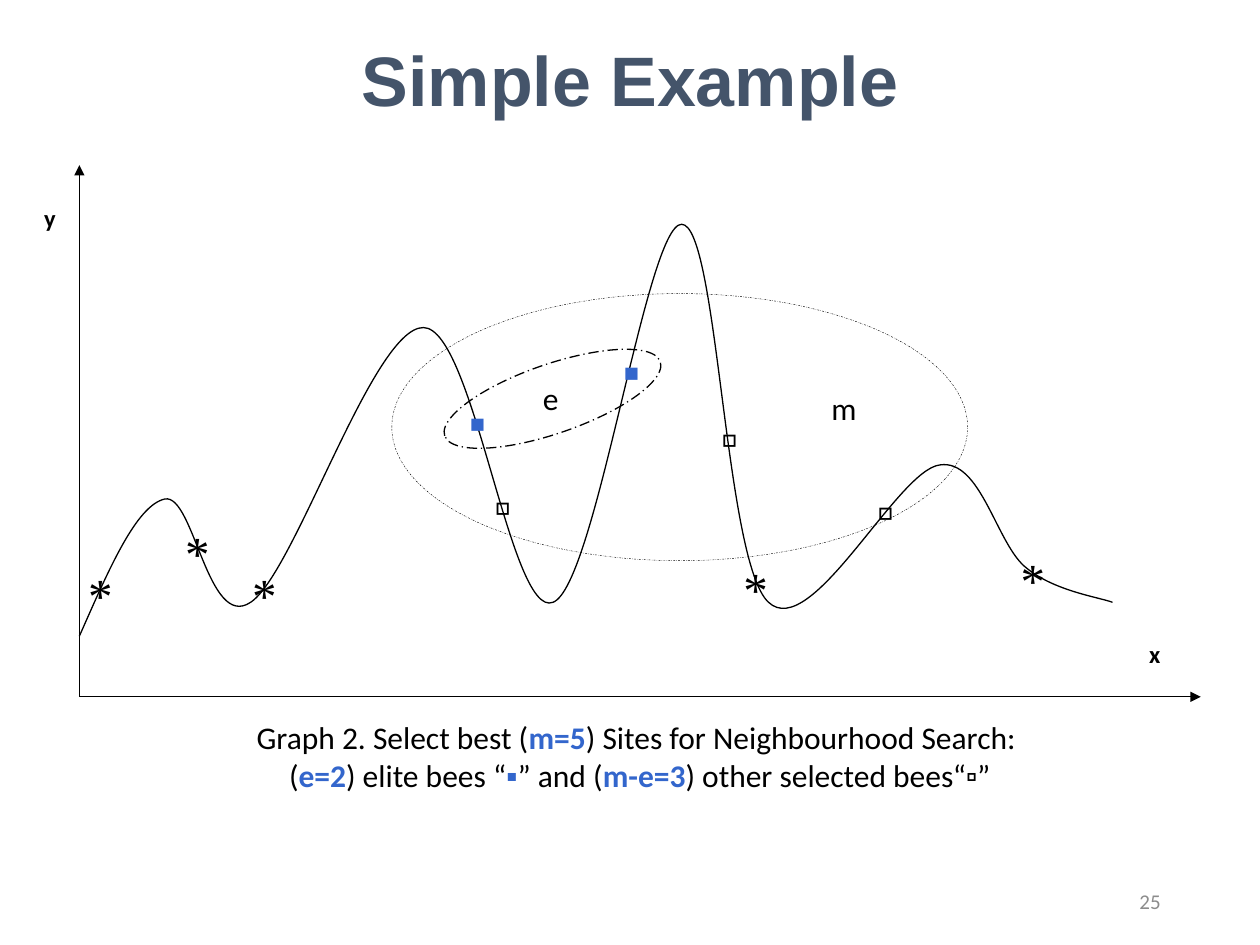
from lxml import etree
from pptx import Presentation
from pptx.dml.color import RGBColor
from pptx.enum.dml import MSO_LINE
from pptx.enum.shapes import MSO_CONNECTOR, MSO_SHAPE
from pptx.enum.text import MSO_ANCHOR, PP_ALIGN
from pptx.oxml.ns import qn
from pptx.util import Inches, Pt

LEFT, CENTER, RIGHT = PP_ALIGN.LEFT, PP_ALIGN.CENTER, PP_ALIGN.RIGHT
TOP, MIDDLE = MSO_ANCHOR.TOP, MSO_ANCHOR.MIDDLE
OVAL, STRAIGHT = MSO_SHAPE.OVAL, MSO_CONNECTOR.STRAIGHT
DASH_DOT, LONG_DASH_DOT = MSO_LINE.DASH_DOT, MSO_LINE.LONG_DASH_DOT

COLORS = {"ink": "000000", "accent": "3366CC", "title": "44546A", "page": "8C8C8C"}
BODY, HEADING, SYMBOL = "Calibri", "Arial", "Times New Roman"
WIDTH, HEIGHT = Inches(10), Inches(7.5)
COLUMN, ROW = WIDTH / 100, HEIGHT / 75
DEFAULT_INSETS = (0.1, 0.05, 0.1, 0.05)
NO_INSETS = (0, 0, 0, 0)

# Boxes are left, top, width, height in columns and rows
TITLE_BOX = (0, 0, 100, 12.5)
PLOT_BOX = (6.3, 13.1, 89, 42.2)
CAPTION_BOX = (15.9, 56.5, 69.2, 7)
PAGE_BOX = (70.6, 69.5, 22.5, 4)

# Start point, then two handles and an end point for each stretch
FITNESS_CURVE = [
    (0, 37.4),
    (2.3, 32.2), (4.5, 27), (6.8, 26.5),
    (9.1, 26.1), (10.2, 37), (13.6, 34.7),
    (17.1, 32.4), (23.3, 12.9), (27.3, 12.9),
    (31.3, 12.9), (34.2, 36.1), (37.6, 34.7),
    (41, 33.4), (45, 4.7), (47.8, 4.7),
    (50.7, 4.7), (51.2, 31.5), (54.7, 34.7),
    (58.1, 37.9), (64.9, 24.2), (68.3, 23.8),
    (71.6, 23.3), (72.8, 30.2), (75.2, 32),
    (77.4, 33.8), (80.9, 34.3), (82, 34.7),
]
# Column, row, left inset, right inset
ELITE_BEES = [(29.3, 17.4, 0.08, 0), (41.6, 13.4, 0.1, 0.12)]
OTHER_BEES = [(31.4, 24.1, 0.06, 0), (50.1, 18.7, 0, 0.08)]
UNSELECTED_BEES = [(-0.5, 31.2), (73.5, 30), (51.5, 30.7), (12.5, 31.2), (7.2, 27.9)]


def emu(box):
    """Turn pairs of columns and rows into lengths."""
    return [round(n * (ROW if i % 2 else COLUMN)) for i, n in enumerate(box)]


def within(box, left, top, *size):
    return (box[0] + left, box[1] + top, *size)


def color(name):
    return RGBColor.from_string(COLORS[name])


def write(shape, lines, size, font=BODY, align=LEFT, anchor=TOP,
          insets=DEFAULT_INSETS, wrap=True):
    """Fill a shape with lines, each a list of (text, colour, bold) runs."""
    frame = shape.text_frame
    frame.word_wrap = wrap
    frame.vertical_anchor = anchor
    (frame.margin_left, frame.margin_top,
     frame.margin_right, frame.margin_bottom) = map(Inches, insets)
    for number, line in enumerate(lines):
        paragraph = frame.add_paragraph() if number else frame.paragraphs[0]
        paragraph.alignment = align
        for text, ink, bold in line:
            run = paragraph.add_run()
            run.text = text
            run.font.name, run.font.size, run.font.bold = font, Pt(size), bold
            run.font.color.rgb = color(ink)


def add_text(slide, box, lines, size, **style):
    area = slide.shapes.add_textbox(*emu(box))
    write(area, lines, size, **style)
    return area


def add_oval(slide, box, weight=None, dash=None, rotation=0):
    oval = slide.shapes.add_shape(OVAL, *emu(box))
    oval.shadow.inherit = False
    oval.fill.background()
    oval.rotation = rotation
    if weight:
        oval.line.color.rgb = color("ink")
        oval.line.width = Pt(weight)
        oval.line.dash_style = dash
    else:
        oval.line.fill.background()
    return oval


def add_axis(slide, start, end):
    axis = slide.shapes.add_connector(STRAIGHT, *emu(start), *emu(end))
    axis.line.color.rgb = color("ink")
    axis.line.width = Pt(0.75)
    etree.SubElement(axis.line._get_or_add_ln(), qn("a:tailEnd"), type="triangle")
    etree.SubElement(axis._element.spPr, qn("a:effectLst"))


def add_curve(slide, box):
    start, *rest = [emu(within(box, *point)) for point in FITNESS_CURVE]
    builder = slide.shapes.build_freeform(*start)
    builder.add_line_segments(rest, close=False)
    curve = builder.convert_to_shape()
    curve.shadow.inherit = False
    curve.fill.background()
    curve.line.color.rgb = color("ink")
    curve.line.width = Pt(0.75)
    # Every three straight steps become one cubic stretch
    steps = list(curve._element.iter(qn("a:lnTo")))
    outline = steps[0].getparent()
    for first in range(0, len(steps), 3):
        stretch = etree.SubElement(outline, qn("a:cubicBezTo"))
        for step in steps[first:first + 3]:
            stretch.append(step[0])
            outline.remove(step)


def add_bees(slide, box):
    for bees, symbol, ink in ((ELITE_BEES, "▪", "accent"), (OTHER_BEES, "▫", "ink")):
        for column, row, left, right in bees:
            bee = add_oval(slide, within(box, column, row, 3.8, 3.8))
            write(bee, [[(symbol, ink, False)]], 28, font=SYMBOL, align=CENTER,
                  insets=(left, 0, right, 0))
    add_text(slide, within(box, 63.3, 25, 1.6, 4.7), [[("▫", "ink", False)]], 28,
             font=SYMBOL, insets=NO_INSETS)
    for column, row in UNSELECTED_BEES:
        add_text(slide, within(box, column, row, 2.5, 2.5), [[("*", "ink", False)]], 28,
                 font=SYMBOL, insets=(0.12, 0.05, 0.1, 0.05))


def add_plot(slide, box):
    width, height = box[2:]
    origin = within(box, 0, height)
    add_axis(slide, origin, within(box, 0, 0))
    add_axis(slide, origin, within(box, width, height))
    add_curve(slide, box)
    for name, column, row in (("x", 84.9, 37.6), ("y", -2.8, 3)):
        add_text(slide, within(box, column, row, 4.7, 4.7), [[(name, "ink", True)]], 14,
                 insets=NO_INSETS)
    add_bees(slide, box)
    add_oval(slide, within(box, 24.8, 10.2, 45.7, 21.2), 0.25, DASH_DOT)
    add_oval(slide, within(box, 28.5, 15.8, 18.1, 5.5), 0.75, LONG_DASH_DOT, rotation=341)
    for name, column, row, room in (("m", 58.7, 17.3, 7.1), ("e", 35.8, 16.5, 3.9)):
        add_text(slide, within(box, column, row, room, 4), [[(name, "ink", False)]], 18)


def add_title(slide, box):
    title = add_text(slide, box, [[("Simple Example", "title", True)]], 40,
                     font=HEADING, align=CENTER, anchor=MIDDLE)
    paragraph = title.text_frame.paragraphs[0]
    paragraph.space_before, paragraph.space_after = Pt(12), Pt(3)


def add_caption(slide, box):
    add_text(slide, box, [
        [("Graph 2. Select best (", "ink", False), ("m=5", "accent", True),
         (") Sites for Neighbourhood Search:", "ink", False)],
        [(" (", "ink", False), ("e=2", "accent", True), (") elite bees “", "ink", False),
         ("▪", "accent", False), ("” and (", "ink", False), ("m-e=3", "accent", True),
         (") other selected bees“▫”", "ink", False)],
    ], 18, align=CENTER, anchor=MIDDLE, wrap=False)


def add_page_number(slide, box):
    add_text(slide, box, [[("25", "page", False)]], 12, align=RIGHT, anchor=MIDDLE)


def main():
    deck = Presentation()
    deck.slide_width, deck.slide_height = WIDTH, HEIGHT
    slide = deck.slides.add_slide(deck.slide_layouts[6])
    add_page_number(slide, PAGE_BOX)
    add_caption(slide, CAPTION_BOX)
    add_plot(slide, PLOT_BOX)
    add_title(slide, TITLE_BOX)
    deck.save("out.pptx")


if __name__ == "__main__":
    main()
